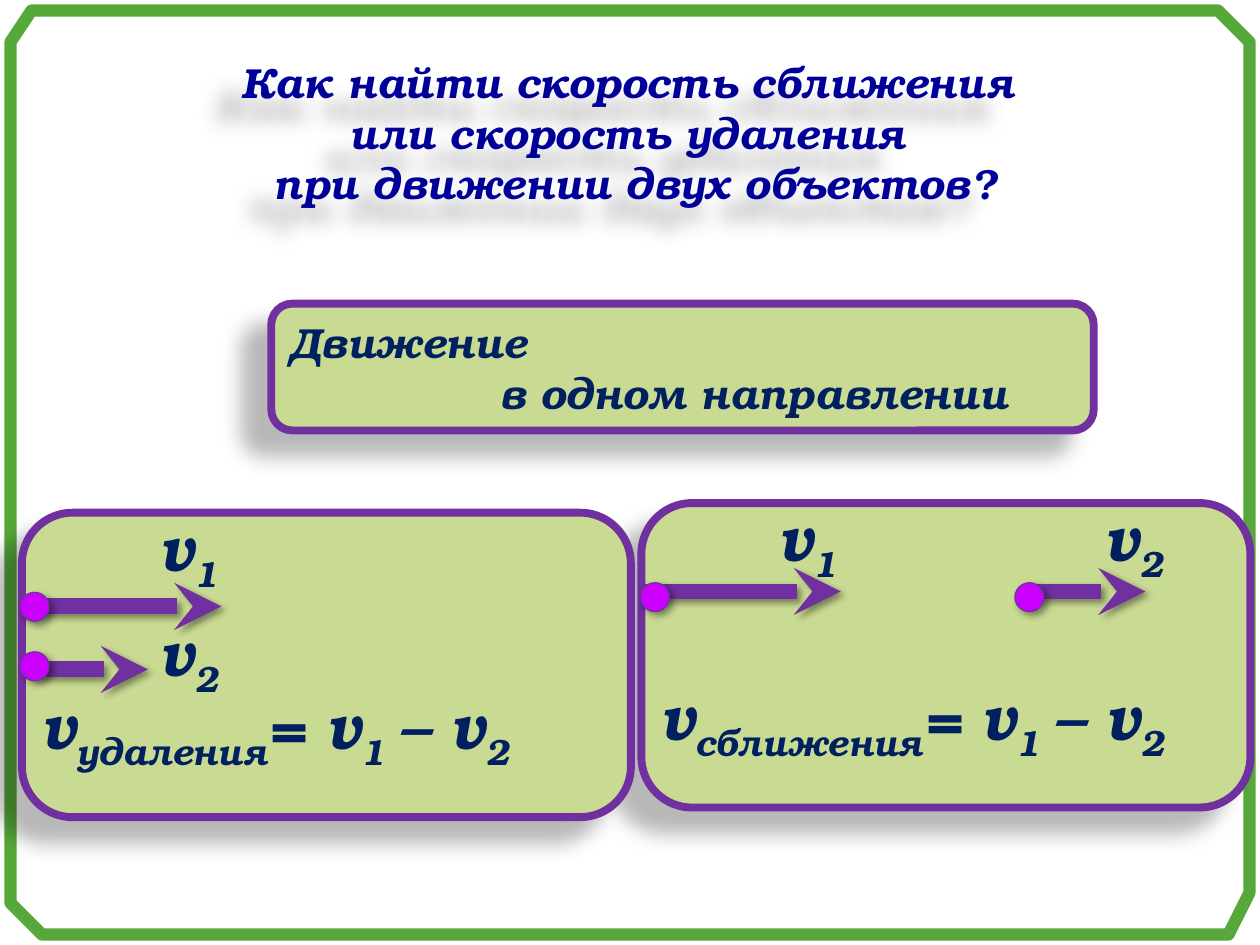
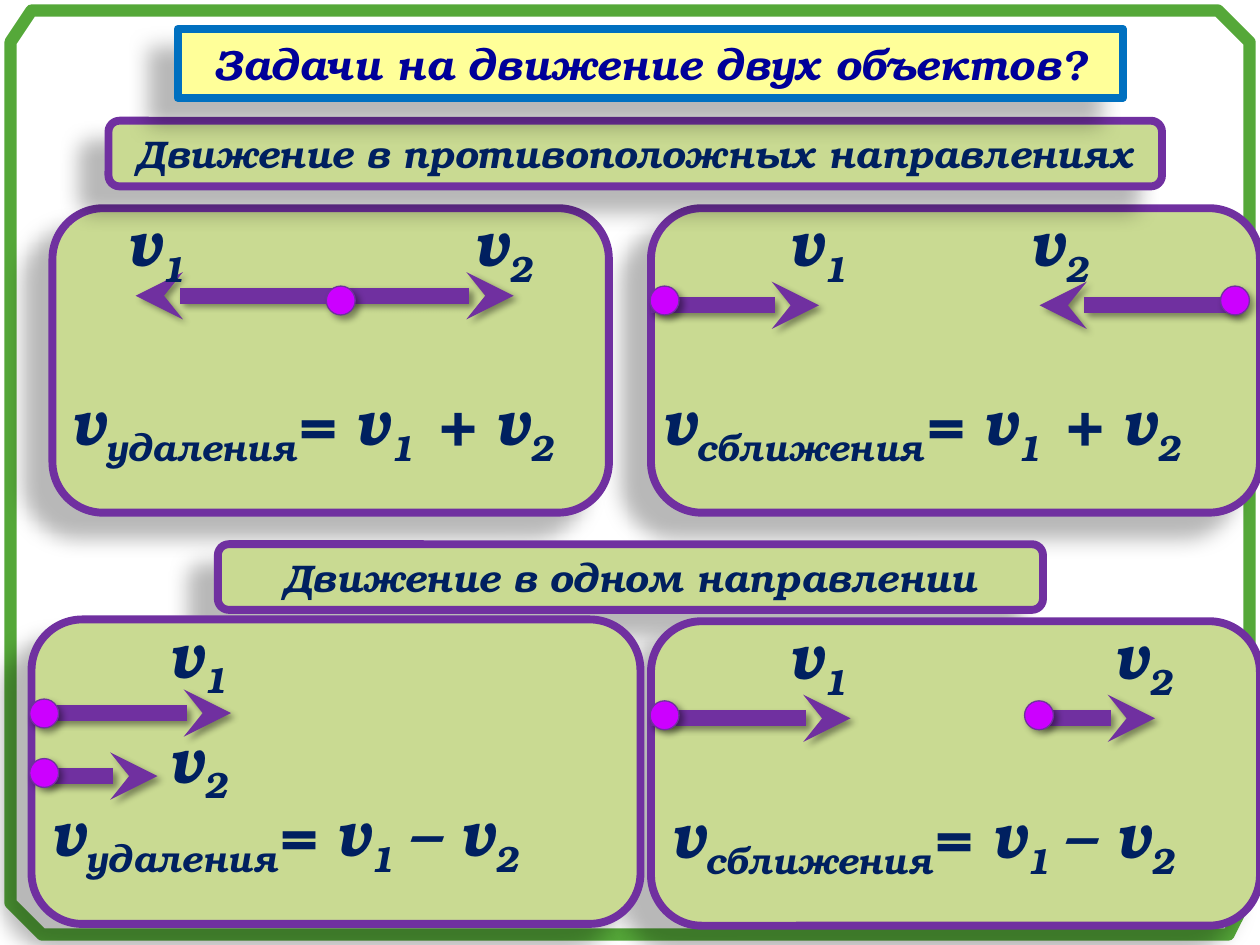
"""Build two slides on the closing and parting speed of two moving objects."""
from dataclasses import dataclass

from lxml.etree import SubElement
from pptx import Presentation
from pptx.dml.color import RGBColor
from pptx.enum.shapes import MSO_CONNECTOR as CONNECTOR, MSO_SHAPE as SHAPE
from pptx.enum.text import MSO_ANCHOR as ANCHOR, MSO_AUTO_SIZE as AUTO_SIZE, PP_ALIGN as ALIGN
from pptx.oxml.ns import qn
from pptx.util import Pt


@dataclass(frozen=True)
class Theme:
    font: str = "TeX Gyre Bonum"
    frame: str = "55A839"
    panel: str = "C9DA92"
    purple: str = "7030A0"
    ball: str = "CC00FF"
    ink: str = "002060"
    title_ink: str = "000099"
    title_fill: str = "FFFF99"
    title_line: str = "0070C0"
    title_size: float = 24
    header_size: float = 22
    speed_size: float = 36
    frame_width: float = 7
    border_width: float = 4.5
    arrow_width: float = 9
    ball_width: float = 0.75
    wide_shadow: tuple = (28, 11.8, 19.7, 141)
    small_shadow: tuple = (40, 4, 3, 45)


THEME = Theme()
SLIDE_SIZE = (720, 540)
FRAME = [(6, 24), (6, 516), (24, 534), (702, 534), (714, 510),
         (714, 24), (696, 6), (18, 6)]
PANEL_WIDTH, PANEL_HEIGHT = 348, 174
BALL = 16.5
LABEL_SIZE = (54, 50.5)
FORMULA_HEIGHT = 51

PARTING_SUM = ("v", "удаления", "= v", "1", " + v", "2")
CLOSING_SUM = ("v", "сближения", "= v", "1", " + v", "2")
PARTING_DIFFERENCE = ("v", "удаления", "= v", "1 ", "– v", "2")
CLOSING_DIFFERENCE = ("v", "сближения", "= v", "1 ", "– v", "2")

# Scene positions are measured from the corner of the panel.
APART = dict(
    formula=(PARTING_SUM, 3.5, 96),
    arrows=[(168, 263.5, 50), (162, 47.5, 50)],
    balls=[(156.5, 44.5)],
    labels=[(36, -6), (234, -6)],
)
TOWARDS = dict(
    formula=(CLOSING_SUM, -0.5, 96),
    arrows=[(0, 96, 55.5), (335.5, 222, 55.5)],
    balls=[(-0.5, 44.5), (325.5, 44.5)],
    labels=[(72, -6), (209.5, -6)],
)
LEAVING_BEHIND = dict(
    formula=(PARTING_DIFFERENCE, 4.5, 96),
    arrows=[(0, 114, 53.5), (6, 72, 89.5)],
    balls=[(-1, 45.5), (-1, 79.5)],
    labels=[(72, -6), (72, 54)],
)
CATCHING_UP = dict(
    formula=(CLOSING_DIFFERENCE, 4.5, 96),
    arrows=[(0, 114, 55.5), (222, 288, 55.5)],
    balls=[(-0.5, 45.5), (213.5, 45.5)],
    labels=[(72, -6), (258, -6)],
)
CATCHING_UP_HIGH = CATCHING_UP | dict(arrows=[(0, 114, 50.5), (222, 288, 50.5)])

SLIDES = [
    dict(
        title=["Как найти скорость сближения ", "или скорость удаления ",
               "при движении двух объектов?"],
        title_box=(28, 22.5, 669.5, 106.5),
        title_filled=False,
        parts=[
            ("panel", CATCHING_UP_HIGH, 366.5, 287.5, PANEL_WIDTH),
            ("panel", LEAVING_BEHIND, 12.5, 293, PANEL_WIDTH),
            ("header", ["Движение", "в одном направлении"],
             (155, 173.5, 470, 72.5), THEME.title_size),
        ],
    ),
    dict(
        title=["Задачи на движение двух объектов?"],
        title_box=(101.5, 16.5, 540, 39.5),
        title_filled=True,
        parts=[
            ("panel", TOWARDS, 372, 119, PANEL_WIDTH),
            ("panel", APART, 30, 119, 318),
            ("header", ["Движение в противоположных направлениях"],
             (62, 69, 602, 37.5), THEME.header_size),
            ("header", ["Движение в одном направлении"],
             (124.5, 311, 471.5, 37.5), THEME.header_size),
            ("panel", CATCHING_UP, 372, 355, PANEL_WIDTH),
            ("panel", LEAVING_BEHIND, 18, 354, PANEL_WIDTH),
        ],
    ),
]
SECOND_LINE_INDENT = 120


def points(*values):
    return [Pt(value) for value in values]


def paint_line(line, color, width):
    line.color.rgb = RGBColor.from_string(color)
    line.width = Pt(width)


def paint(shape, fill, line, width):
    shape.fill.solid()
    shape.fill.fore_color.rgb = RGBColor.from_string(fill)
    paint_line(shape.line, line, width)


def add_shadow(shape, alpha, blur, distance, angle):
    effects = SubElement(shape._element.spPr, qn("a:effectLst"))
    shadow = SubElement(effects, qn("a:outerShdw"), blurRad=str(Pt(blur)),
                        dist=str(Pt(distance)), dir=str(angle * 60000),
                        algn="ctr", rotWithShape="0")
    color = SubElement(shadow, qn("a:srgbClr"), val="000000")
    SubElement(color, qn("a:alpha"), val=str(alpha * 1000))


def style_paragraph(paragraph, size, color, align):
    paragraph.alignment = align
    font = paragraph.font
    font.name, font.size = THEME.font, Pt(size)
    font.bold = font.italic = True
    font.color.rgb = RGBColor.from_string(color)


def write_lines(shape, lines, size, color, align=ALIGN.CENTER):
    frame = shape.text_frame
    frame.word_wrap = True
    frame.auto_size = AUTO_SIZE.NONE
    frame.vertical_anchor = ANCHOR.MIDDLE
    frame.text = "\n".join(lines)
    for paragraph in frame.paragraphs:
        style_paragraph(paragraph, size, color, align)


def add_frame(slide):
    builder = slide.shapes.build_freeform(*points(*FRAME[0]))
    builder.add_line_segments([points(*corner) for corner in FRAME[1:]], close=True)
    frame = builder.convert_to_shape()
    frame.shadow.inherit = False
    frame.fill.background()
    paint_line(frame.line, THEME.frame, THEME.frame_width)


def add_card(slide, box):
    card = slide.shapes.add_shape(SHAPE.ROUNDED_RECTANGLE, *points(*box))
    paint(card, THEME.panel, THEME.purple, THEME.border_width)
    add_shadow(card, *THEME.wide_shadow)
    return card


def add_header(slide, lines, box, size):
    card = add_card(slide, box)
    align = ALIGN.CENTER if len(lines) == 1 else ALIGN.LEFT
    write_lines(card, lines, size, THEME.ink, align)
    for paragraph in card.text_frame.paragraphs[1:]:
        paragraph._p.get_or_add_pPr().set("marL", str(Pt(SECOND_LINE_INDENT)))


def add_speed(slide, runs, box):
    """Write runs that alternate between normal text and subscript."""
    frame = slide.shapes.add_textbox(*points(*box)).text_frame
    frame.word_wrap = True
    paragraph = frame.paragraphs[0]
    style_paragraph(paragraph, THEME.speed_size, THEME.ink, ALIGN.LEFT)
    for index, text in enumerate(runs):
        run = paragraph.add_run()
        run.text = text
        if index % 2:
            run._r.get_or_add_rPr().set("baseline", "-25000")


def add_arrow(slide, start, end, y):
    arrow = slide.shapes.add_connector(CONNECTOR.STRAIGHT, *points(start, y, end, y))
    paint_line(arrow.line, THEME.purple, THEME.arrow_width)
    SubElement(arrow._element.spPr.find(qn("a:ln")), qn("a:tailEnd"), type="stealth")
    add_shadow(arrow, *THEME.small_shadow)


def add_ball(slide, x, y):
    ball = slide.shapes.add_shape(SHAPE.OVAL, *points(x, y, BALL, BALL))
    paint(ball, THEME.ball, THEME.purple, THEME.ball_width)
    add_shadow(ball, *THEME.small_shadow)


def add_panel(slide, scene, left, top, width):
    add_card(slide, (left, top, width, PANEL_HEIGHT))
    runs, x, y = scene["formula"]
    add_speed(slide, runs, (left + x, top + y, width - x, FORMULA_HEIGHT))
    for start, end, y in scene["arrows"]:
        add_arrow(slide, left + start, left + end, top + y)
    for x, y in scene["balls"]:
        add_ball(slide, left + x, top + y)
    for number, (x, y) in enumerate(scene["labels"], 1):
        add_speed(slide, ("v", str(number)), (left + x, top + y, *LABEL_SIZE))


def add_title(slide, lines, box, filled):
    title = slide.shapes.title
    title.left, title.top, title.width, title.height = points(*box)
    geometry = SubElement(title._element.spPr, qn("a:prstGeom"),
                          prst="roundRect" if filled else "rect")
    SubElement(geometry, qn("a:avLst"))
    if filled:
        paint(title, THEME.title_fill, THEME.title_line, THEME.border_width)
    else:
        title.fill.background()
    add_shadow(title, *THEME.wide_shadow)
    write_lines(title, lines, THEME.title_size, THEME.title_ink)
    slide.shapes._spTree.append(title._element)


def main():
    presentation = Presentation()
    presentation.slide_width, presentation.slide_height = points(*SLIDE_SIZE)
    builders = {"panel": add_panel, "header": add_header}
    for content in SLIDES:
        slide = presentation.slides.add_slide(presentation.slide_layouts[5])
        add_frame(slide)
        for kind, *details in content["parts"]:
            builders[kind](slide, *details)
        add_title(slide, content["title"], content["title_box"], content["title_filled"])
    presentation.save("out.pptx")


if __name__ == "__main__":
    main()
